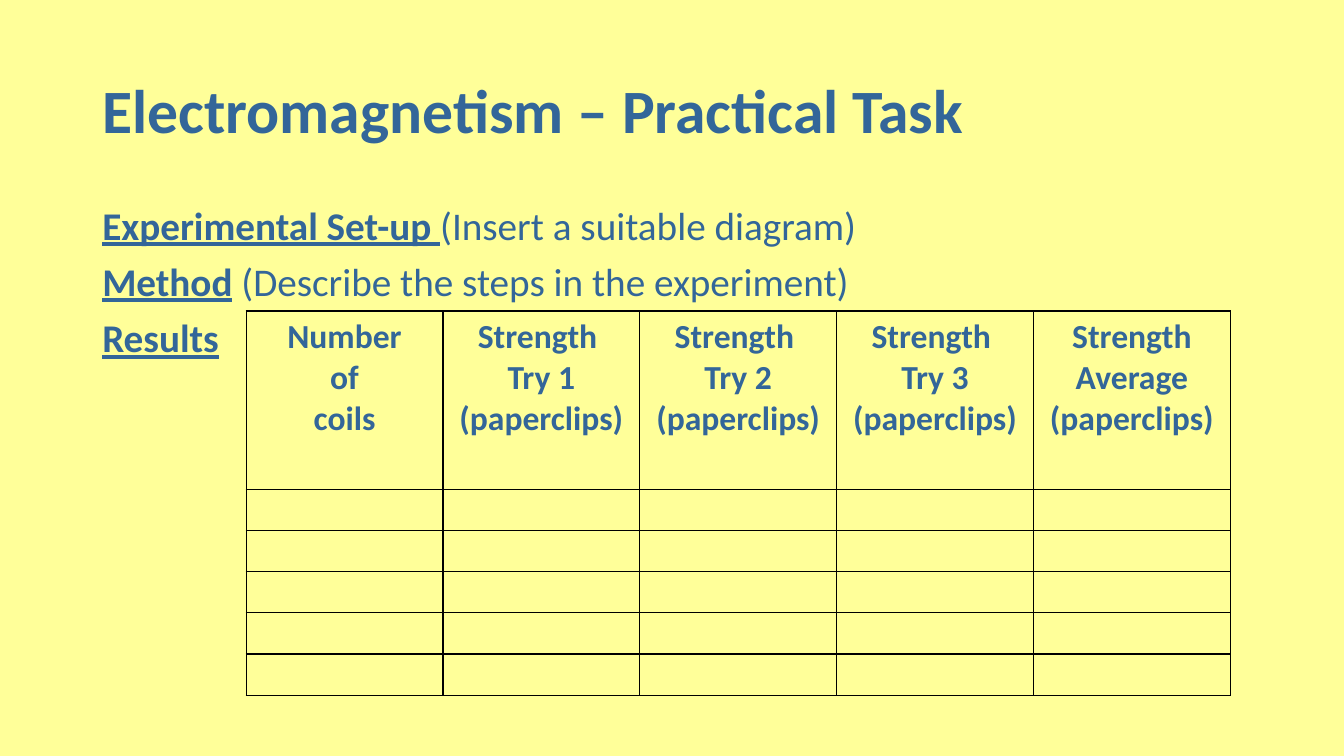
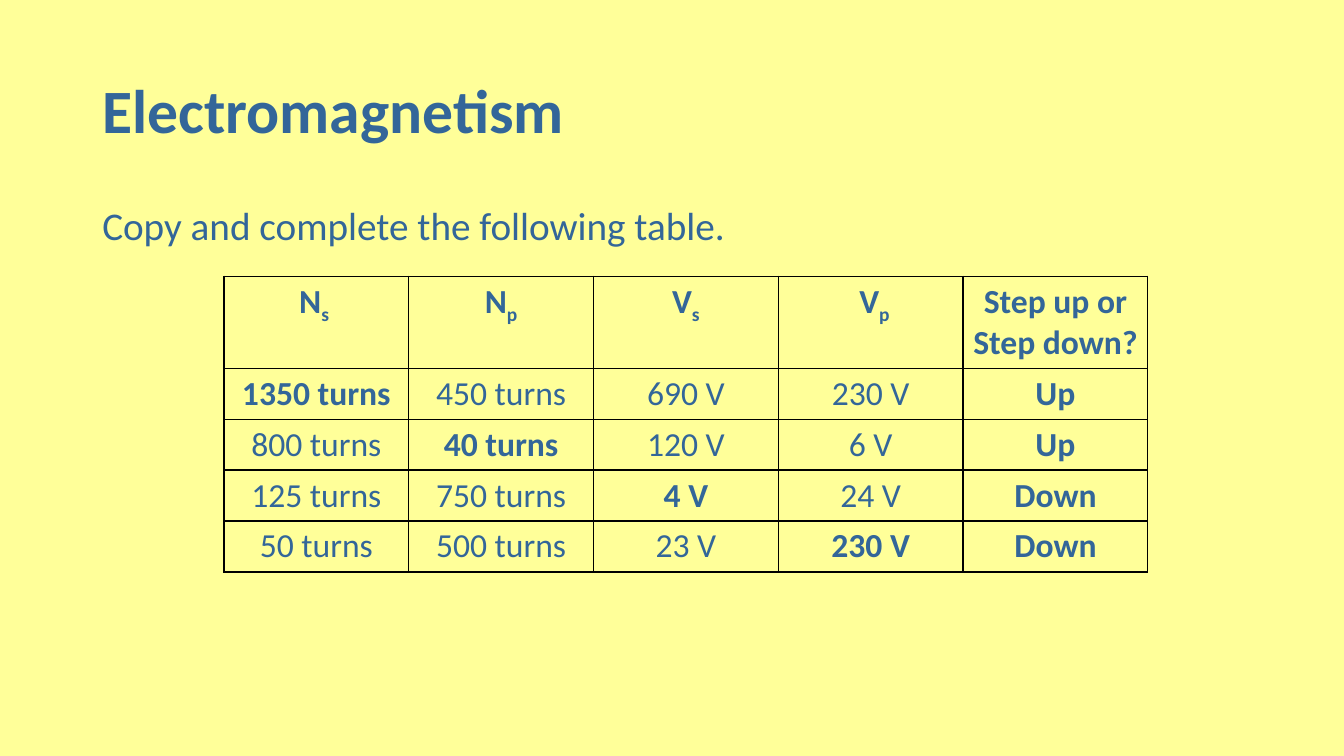
from dataclasses import dataclass

from lxml.etree import SubElement
from pptx import Presentation
from pptx.dml.color import RGBColor
from pptx.enum.text import MSO_ANCHOR, MSO_AUTO_SIZE, PP_ALIGN
from pptx.oxml.ns import qn
from pptx.util import Pt


@dataclass(frozen=True)
class Theme:
    font: str = "Calibri"
    background: RGBColor = RGBColor(0xFF, 0xFF, 0x99)
    ink: RGBColor = RGBColor(0x33, 0x66, 0x99)
    border: str = "000000"
    border_width: int = Pt(1)
    title_size: int = Pt(44)
    body_size: int = Pt(28)
    table_size: int = Pt(24)
    line_spacing: float = 0.9
    paragraph_gap: int = Pt(10)
    margin_left: int = Pt(66)
    content_width: int = Pt(828)


@dataclass(frozen=True)
class Part:
    text: str
    bold: bool = False
    underline: bool = False
    subscript: bool = False


def heading(text):
    return Part(text, bold=True, underline=True)


def bold(text):
    return Part(text, bold=True)


def symbol(letter, index):
    return [[bold(letter), Part(index, bold=True, subscript=True)]]


def bold_lines(*lines):
    return [[bold(line)] for line in lines]


class Deck:
    def __init__(self, theme):
        self.theme = theme
        self.presentation = Presentation()
        self.presentation.slide_width = Pt(960)
        self.presentation.slide_height = Pt(540)
        backdrop = self.presentation.slide_master.background.fill
        backdrop.solid()
        backdrop.fore_color.rgb = theme.background
        self.slide = None

    def style(self, font, size, is_bold=False, underline=False):
        font.name = self.theme.font
        font.size = size
        font.color.rgb = self.theme.ink
        font.bold = is_bold
        font.underline = underline

    def set_paragraphs(self, frame, paragraphs, size, align):
        for index, parts in enumerate(paragraphs):
            paragraph = frame.paragraphs[0] if index == 0 else frame.add_paragraph()
            paragraph.alignment = align
            for part in parts:
                run = paragraph.add_run()
                run.text = part.text
                self.style(run.font, size, part.bold, part.underline)
                if part.subscript:
                    run._r.get_or_add_rPr().set("baseline", "-25000")

    def add_slide(self, title):
        self.slide = self.presentation.slides.add_slide(self.presentation.slide_layouts[5])
        holder = self.slide.shapes.title
        holder.left, holder.top = self.theme.margin_left, Pt(28.75)
        holder.width, holder.height = self.theme.content_width, Pt(104.4)
        frame = holder.text_frame
        frame.auto_size = MSO_AUTO_SIZE.NONE
        frame.vertical_anchor = MSO_ANCHOR.MIDDLE
        self.set_paragraphs(frame, [[bold(title)]], self.theme.title_size, PP_ALIGN.LEFT)
        frame.paragraphs[0].line_spacing = self.theme.line_spacing

    def add_body(self, paragraphs):
        box = self.slide.shapes.add_textbox(
            self.theme.margin_left, Pt(143.75), self.theme.content_width, Pt(342.6))
        frame = box.text_frame
        frame.word_wrap = True
        self.set_paragraphs(frame, paragraphs, self.theme.body_size, PP_ALIGN.LEFT)
        for index, paragraph in enumerate(frame.paragraphs):
            paragraph.line_spacing = self.theme.line_spacing
            if index:
                paragraph.space_before = self.theme.paragraph_gap

    def add_table(self, rows, left, top, column_width, header_height, row_height):
        columns = len(rows[0])
        height = header_height + row_height * (len(rows) - 1)
        table = self.slide.shapes.add_table(
            len(rows), columns, left, top, column_width * columns, height).table
        table.first_row = table.horz_banding = False
        for column in table.columns:
            column.width = column_width
        for index, row in enumerate(table.rows):
            row.height = row_height if index else header_height
            for cell, paragraphs in zip(row.cells, rows[index]):
                self.add_borders(cell)
                cell.fill.background()
                self.set_paragraphs(
                    cell.text_frame, paragraphs, self.theme.table_size, PP_ALIGN.CENTER)

    def add_borders(self, cell):
        properties = cell._tc.get_or_add_tcPr()
        for side in ("a:lnL", "a:lnR", "a:lnT", "a:lnB"):
            line = SubElement(properties, qn(side), w=str(self.theme.border_width))
            fill = SubElement(line, qn("a:solidFill"))
            SubElement(fill, qn("a:srgbClr"), val=self.theme.border)

    def save(self):
        self.presentation.save("out.pptx")


def practical_task(deck):
    deck.add_slide("Electromagnetism – Practical Task")
    deck.add_body([
        [heading("Experimental Set-up "), Part("(Insert a suitable diagram)")],
        [heading("Method"), Part(" (Describe the steps in the experiment)")],
        [heading("Results")],
    ])
    tries = [bold_lines("Strength ", f"Try {number}", "(paperclips)") for number in range(1, 4)]
    header = [
        bold_lines("Number", " of ", "coils"),
        *tries,
        bold_lines("Strength Average", "(paperclips)"),
    ]
    empty_rows = [[[] for _ in header] for _ in range(5)]
    deck.add_table([header, *empty_rows], Pt(175.8), Pt(222.2), Pt(140.6), Pt(127.4), Pt(29.4))


def transformer_table(deck):
    deck.add_slide("Electromagnetism")
    deck.add_body([[Part("Copy and complete the following table.")]])
    header = [
        symbol("N", "s "), symbol("N", "p"), symbol("V", "s"), symbol(" V", "p"),
        bold_lines("Step up or", "Step down?"),
    ]
    transformers = [
        (bold("1350 turns"), Part("450 turns"), Part("690 V"), Part("230 V"), bold("Up")),
        (Part("800 turns"), bold("40 turns"), Part("120 V"), Part("6 V"), bold("Up")),
        (Part("125 turns"), Part("750 turns"), bold("4 V"), Part("24 V"), bold("Down")),
        (Part("50 turns"), Part("500 turns"), Part("23 V"), bold("230 V"), bold("Down")),
    ]
    values = [[[[entry]] for entry in transformer] for transformer in transformers]
    deck.add_table([header, *values], Pt(160), Pt(197.3), Pt(132), Pt(65.7), Pt(36.4))


def main():
    deck = Deck(Theme())
    practical_task(deck)
    transformer_table(deck)
    deck.save()


if __name__ == "__main__":
    main()
